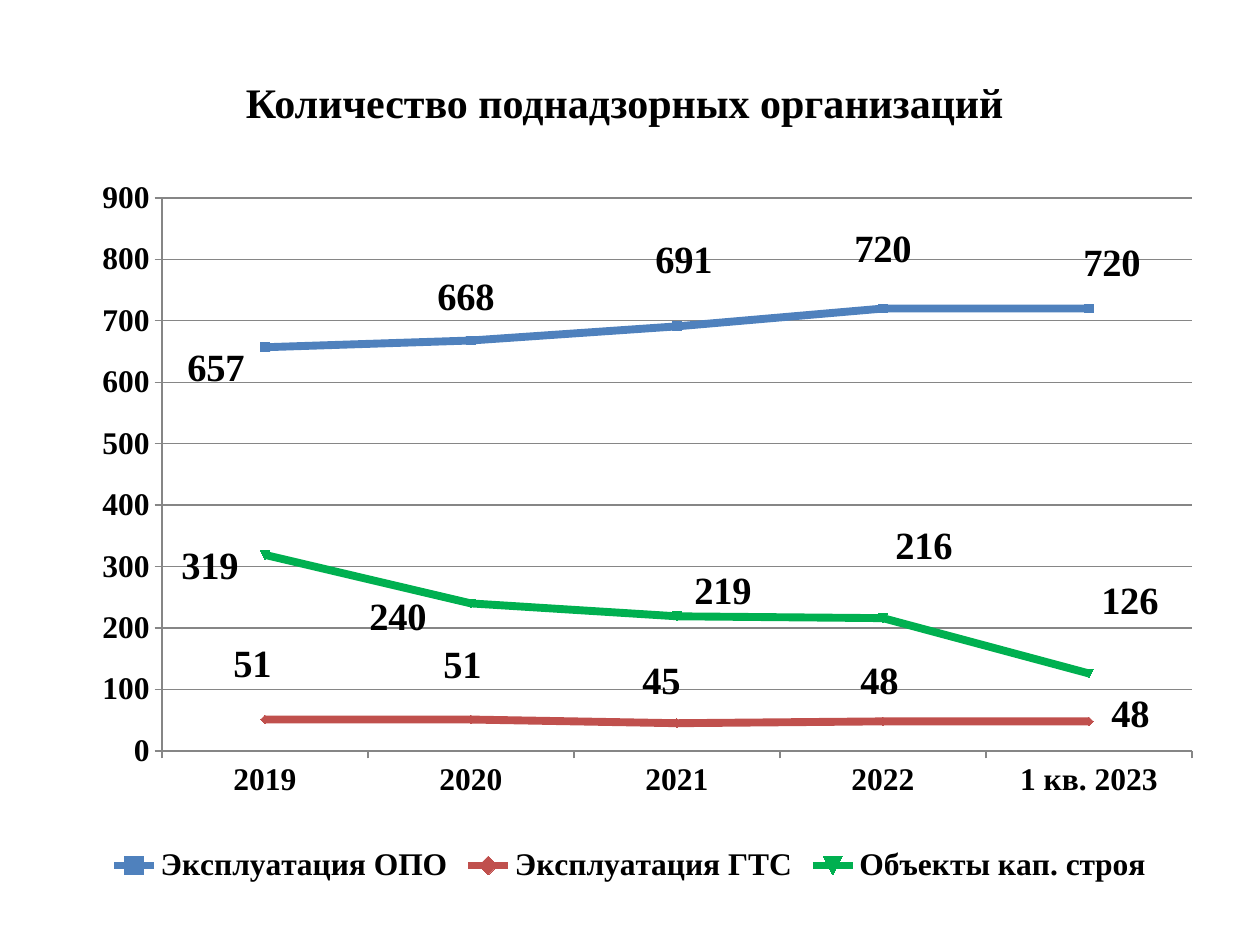
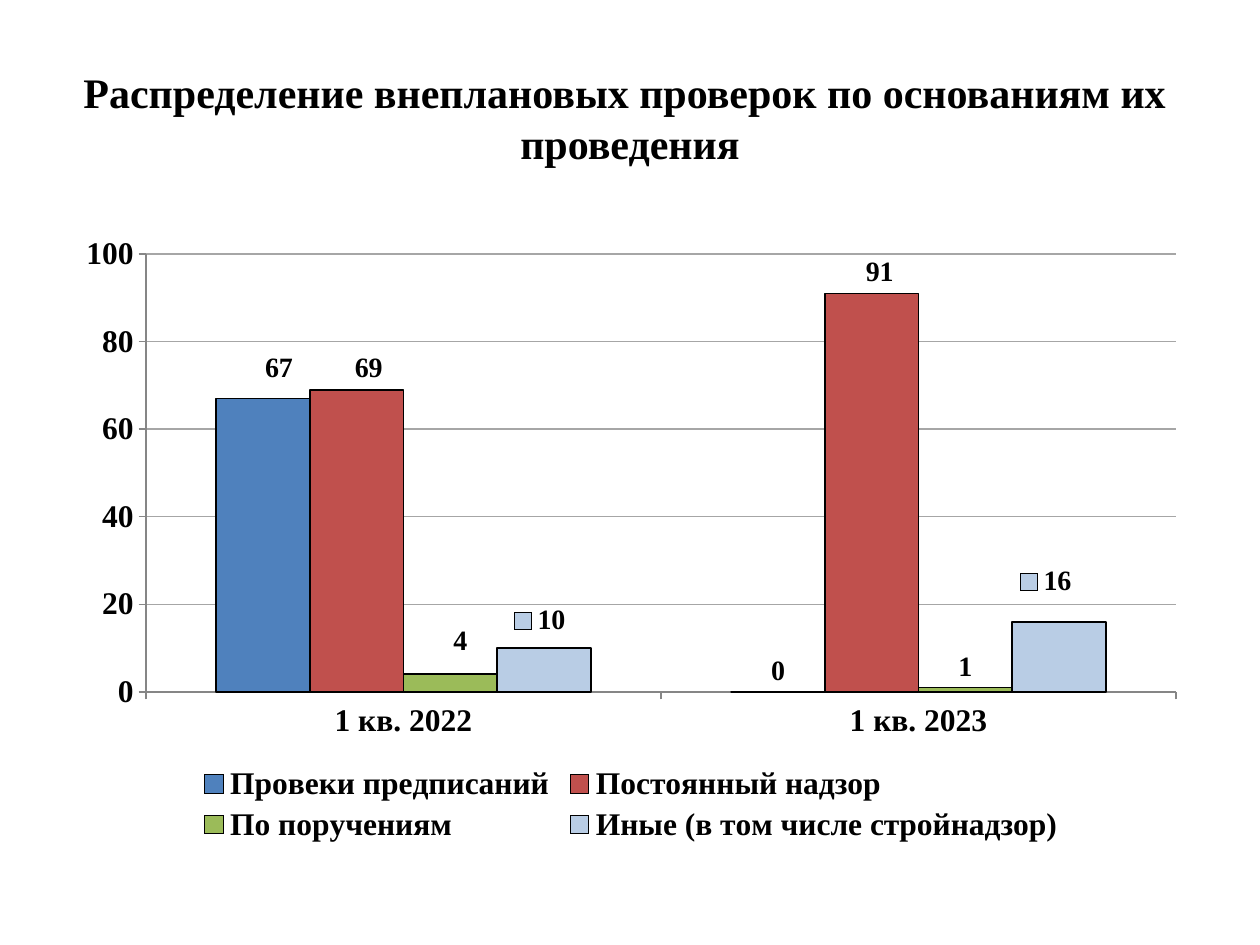
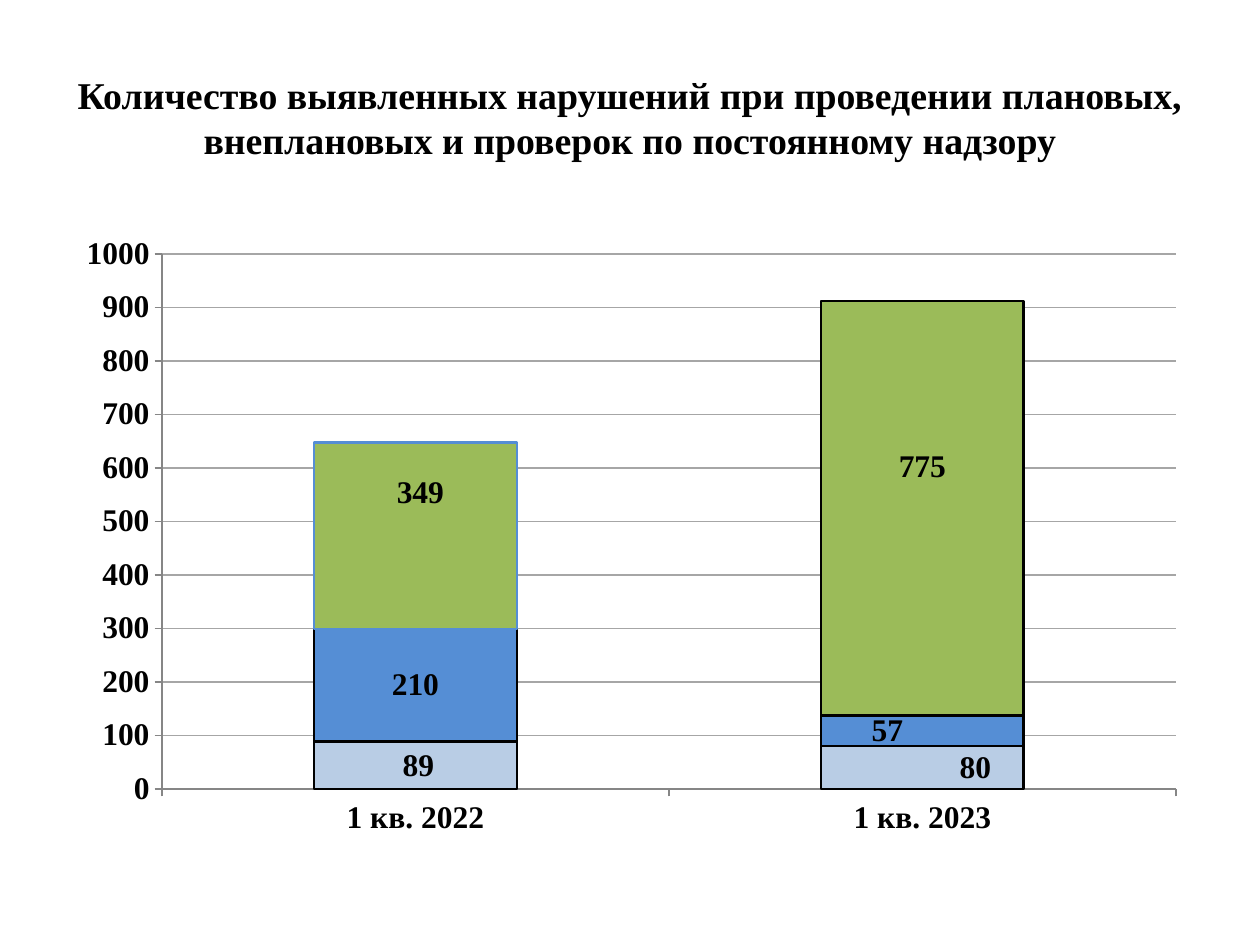
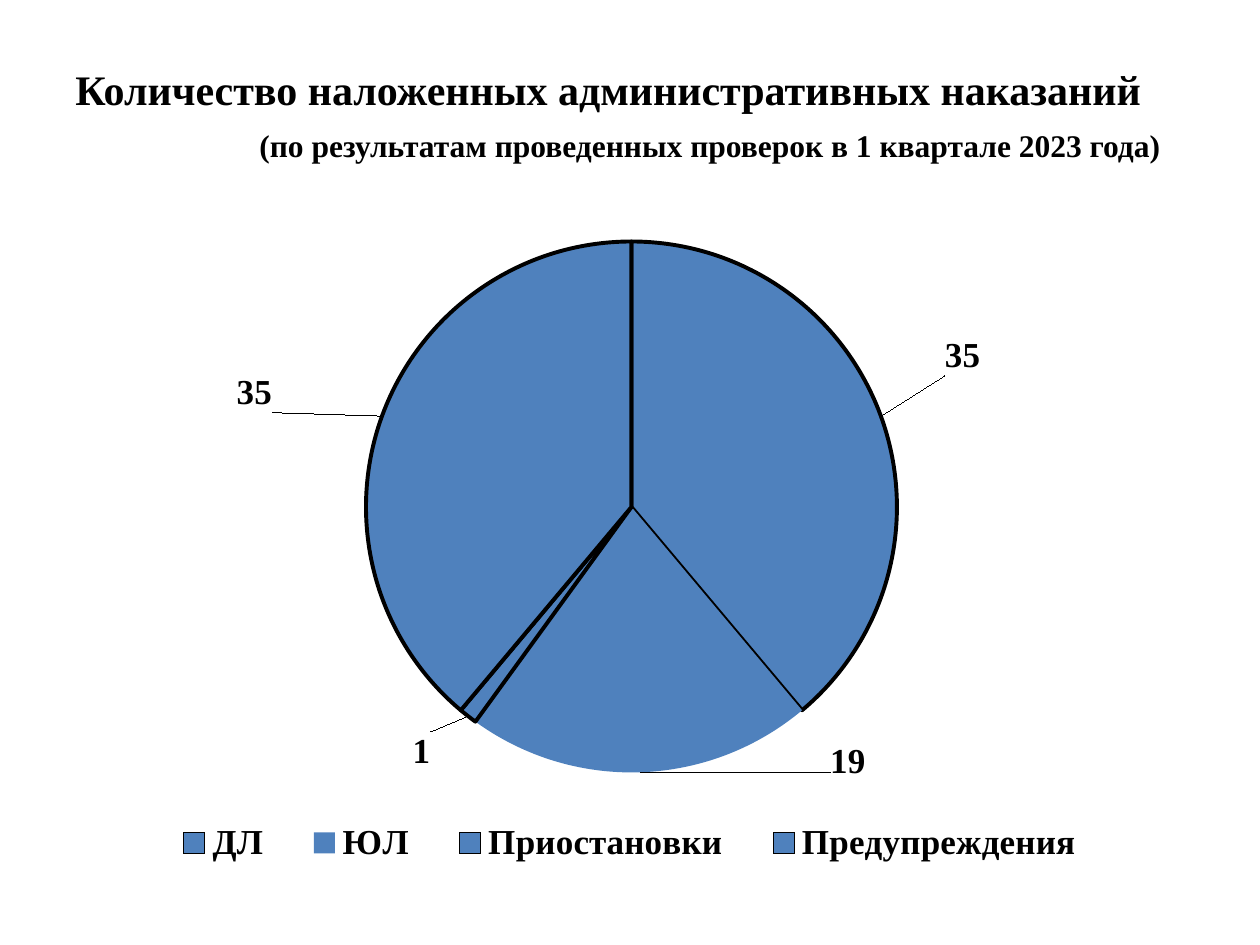
from dataclasses import dataclass, field
from typing import Any, Optional

from pptx import Presentation
from pptx.chart.data import CategoryChartData
from pptx.dml.color import RGBColor
from pptx.enum.chart import XL_CHART_TYPE, XL_LABEL_POSITION, XL_LEGEND_POSITION, XL_TICK_MARK
from pptx.enum.text import MSO_ANCHOR, PP_ALIGN
from pptx.oxml import parse_xml
from pptx.oxml.ns import nsdecls, qn
from pptx.util import Pt

LINE = XL_CHART_TYPE.LINE_MARKERS
CLUSTERED = XL_CHART_TYPE.COLUMN_CLUSTERED
STACKED = XL_CHART_TYPE.COLUMN_STACKED
PIE = XL_CHART_TYPE.PIE
LABEL_RIGHT = XL_LABEL_POSITION.RIGHT
LABEL_CENTER = XL_LABEL_POSITION.CENTER
LABEL_OUTSIDE = XL_LABEL_POSITION.OUTSIDE_END
LEGEND_BOTTOM = XL_LEGEND_POSITION.BOTTOM
TICK_OUTSIDE = XL_TICK_MARK.OUTSIDE
TICK_NONE = XL_TICK_MARK.NONE
MIDDLE = MSO_ANCHOR.MIDDLE
CENTER = PP_ALIGN.CENTER
LEFT = PP_ALIGN.LEFT

PX_PER_INCH = 126
EMU_PER_INCH = 914400
FONT = "Times New Roman"
COLORS = {
    "background": "FFFFFF",
    "text": "000000",
    "outline": "000000",
    "axis": "868686",
    "grid": "A6A6A6",
    "blue": "4F81BD",
    "red": "C0504D",
    "bright_green": "00B050",
    "green": "9BBB59",
    "pale_blue": "B9CDE5",
    "sky_blue": "558ED5",
}
QUARTERS = ("1 кв. 2022", "1 кв. 2023")


@dataclass(frozen=True)
class Box:
    left: int
    top: int
    width: int
    height: int


@dataclass(frozen=True)
class TitleLine:
    text: str
    size: float = 24
    align: Any = CENTER
    indent: int = 0
    space_before: int = 0


@dataclass(frozen=True)
class Series:
    name: str
    values: tuple[int, ...]
    color: str
    label_shifts: tuple[tuple[int, int], ...]
    legend_key: bool = False
    point_outlines: dict[int, Optional[str]] = field(default_factory=dict)


@dataclass(frozen=True)
class ChartSlide:
    title: tuple[TitleLine, ...]
    title_box: Box
    kind: Any
    chart_box: Box
    plot_box: Box
    categories: tuple[str, ...]
    series: tuple[Series, ...]
    label_position: Any
    label_size: int
    line_width: float
    maximum: int = 0
    step: int = 0
    grid: str = "grid"
    has_legend: bool = True
    legend_size: int = 18
    legend_box: Optional[Box] = None
    title_bottom: int = 6


SLIDES = (
    ChartSlide(
        title=(TitleLine("Количество поднадзорных организаций "),),
        title_box=Box(63, 38, 1134, 127),
        kind=LINE,
        chart_box=Box(63, 175, 1134, 714),
        plot_box=Box(162, 198, 1030, 553),
        categories=("2019", "2020", "2021", "2022", "1 кв. 2023"),
        series=(
            Series("Эксплуатация ОПО", (657, 668, 691, 720, 720), "blue",
                   ((-87, 21), (-43, -43), (-31, -66), (-38, -59), (-15, -45))),
            Series("Эксплуатация ГТС", (51, 51, 45, 48, 48), "red",
                   ((-41, -55), (-37, -54), (-44, -42), (-32, -40), (13, -7))),
            Series("Объекты кап. строя", (319, 240, 219, 216, 126), "bright_green",
                   ((-93, 11), (-111, 14), (8, -25), (3, -72), (3, -72))),
        ),
        label_position=LABEL_RIGHT,
        label_size=22,
        line_width=4.5,
        maximum=900,
        step=100,
        grid="axis",
    ),
    ChartSlide(
        title=(TitleLine("Распределение внеплановых проверок по основаниям их \vпроведения"),),
        title_box=Box(63, 38, 1134, 158),
        kind=CLUSTERED,
        chart_box=Box(64, 224, 1134, 624),
        plot_box=Box(146, 254, 1030, 438),
        categories=QUARTERS,
        series=(
            Series("Провеки предписаний", (67, 0), "blue", ((16, -10), (0, 0))),
            Series("Постоянный надзор", (69, 91), "red", ((12, -1), (8, 0))),
            Series("По поручениям", (4, 1), "green", ((10, -12), (0, 0))),
            Series("Иные (в том числе стройнадзор)", (10, 16), "pale_blue",
                   ((-4, -7), (-13, -20)), legend_key=True),
        ),
        label_position=LABEL_OUTSIDE,
        label_size=16,
        line_width=1,
        maximum=100,
        step=20,
    ),
    ChartSlide(
        title=(TitleLine("Количество выявленных нарушений при проведении плановых, "
                         "внеплановых и проверок по постоянному надзору", 21.6),),
        title_box=Box(63, 38, 1134, 158),
        kind=STACKED,
        chart_box=Box(64, 224, 1134, 624),
        plot_box=Box(162, 254, 1014, 535),
        categories=QUARTERS,
        series=(
            Series("Series 1", (89, 80), "pale_blue", ((3, 1), (53, 0))),
            Series("Series 2", (210, 57), "sky_blue", ((0, 0), (-35, 0))),
            Series("Series 3", (349, 775), "green", ((5, -43), (0, -41)),
                   point_outlines={0: "sky_blue"}),
        ),
        label_position=LABEL_CENTER,
        label_size=18,
        line_width=1.5,
        maximum=1000,
        step=100,
        has_legend=False,
    ),
    ChartSlide(
        title=(
            TitleLine("Количество наложенных административных наказаний", align=LEFT),
            TitleLine("(по результатам проведенных проверок в 1 квартале 2023 года)",
                      18, LEFT, indent=184, space_before=7),
        ),
        title_box=Box(63, 38, 1134, 186),
        title_bottom=40,
        kind=PIE,
        chart_box=Box(64, 224, 1134, 674),
        plot_box=Box(366, 241, 531, 532),
        categories=("ДЛ", "ЮЛ", "Приостановки", "Предупреждения"),
        series=(
            Series("Series 1", (35, 19, 1, 35), "blue",
                   ((57, -38), (207, -38), (-33, 10), (-103, -1)),
                   point_outlines={0: "outline", 1: None, 2: "outline", 3: "outline"}),
        ),
        label_position=LABEL_OUTSIDE,
        label_size=20,
        line_width=2.25,
        legend_size=20,
        legend_box=Box(145, 820, 970, 46),
    ),
)


def px(length: int) -> int:
    return round(length * EMU_PER_INCH / PX_PER_INCH)


def frame(box: Box) -> tuple[int, int, int, int]:
    return px(box.left), px(box.top), px(box.width), px(box.height)


def rgb(name: str) -> RGBColor:
    return RGBColor.from_string(COLORS[name])


def apply_format(target: Any, values: dict[str, Any]) -> None:
    for name, value in values.items():
        setattr(target, name, value)


def style_font(font: Any, size: float) -> None:
    apply_format(font, {"name": FONT, "size": Pt(size), "bold": True})
    font.color.rgb = rgb("text")


def style_line(line: Any, color: Optional[str], width: float) -> None:
    if color is None:
        line.fill.background()
    else:
        line.color.rgb = rgb(color)
        line.width = Pt(width)


def style_fill(fill: Any, color: str) -> None:
    fill.solid()
    fill.fore_color.rgb = rgb(color)


def set_layout(parent: Any, index: int, values: dict[str, Any]) -> None:
    for layout in parent.findall(qn("c:layout")):
        parent.remove(layout)
    entries = "".join(f'<c:{name} val="{value}"/>' for name, value in values.items())
    parent.insert(index, parse_xml(
        f'<c:layout {nsdecls("c")}><c:manualLayout>{entries}</c:manualLayout></c:layout>'))


def edge_layout(box: Box, chart_box: Box) -> dict[str, Any]:
    return {
        "xMode": "edge",
        "yMode": "edge",
        "x": (box.left - chart_box.left) / chart_box.width,
        "y": (box.top - chart_box.top) / chart_box.height,
        "w": box.width / chart_box.width,
        "h": box.height / chart_box.height,
    }


def add_title(slide: Any, content: ChartSlide) -> None:
    text_frame = slide.shapes.add_textbox(*frame(content.title_box)).text_frame
    apply_format(text_frame, {
        "word_wrap": True,
        "vertical_anchor": MIDDLE,
        "margin_bottom": px(content.title_bottom),
    })
    for index, line in enumerate(content.title):
        paragraph = text_frame.add_paragraph() if index else text_frame.paragraphs[0]
        paragraph.text = line.text
        apply_format(paragraph, {"alignment": line.align, "space_before": Pt(line.space_before)})
        if line.indent:
            paragraph._p.get_or_add_pPr().set("marL", str(px(line.indent)))
        for run in paragraph.runs:
            style_font(run.font, line.size)


def style_axes(chart: Any, content: ChartSlide) -> None:
    for axis in (chart.category_axis, chart.value_axis):
        apply_format(axis, {"major_tick_mark": TICK_OUTSIDE, "minor_tick_mark": TICK_NONE})
        style_font(axis.tick_labels.font, 18)
        style_line(axis.format.line, "axis", 0.75)
    apply_format(chart.value_axis, {
        "minimum_scale": 0,
        "maximum_scale": content.maximum,
        "major_unit": content.step,
        "has_major_gridlines": True,
    })
    style_line(chart.value_axis.major_gridlines.format.line, content.grid, 0.75)


def style_series(series: Any, data: Series, content: ChartSlide) -> None:
    if content.kind == LINE:
        series.smooth = False
        series.marker.size = 5
        style_line(series.format.line, data.color, content.line_width)
        return
    style_fill(series.format.fill, data.color)
    style_line(series.format.line, "outline", content.line_width)
    if content.kind != PIE:
        series.invert_if_negative = False
    for index, outline in data.point_outlines.items():
        point_format = series.points[index].format
        style_fill(point_format.fill, data.color)
        style_line(point_format.line, outline, content.line_width)


def add_labels(series: Any, data: Series, content: ChartSlide) -> None:
    labels = series.data_labels
    apply_format(labels, {"show_value": True, "position": content.label_position})
    style_font(labels.font, content.label_size)
    for index in range(len(data.values)):
        label = series.points[index].data_label
        style_font(label.font, content.label_size)
        label.position = content.label_position
    for element, (across, down) in zip(labels._element.findall(qn("c:dLbl")), data.label_shifts):
        set_layout(element, 1, {
            "x": across / content.chart_box.width,
            "y": down / content.chart_box.height,
        })
        element.find(qn("c:showLegendKey")).set("val", str(int(data.legend_key)))
    for leader in labels._element.findall(qn("c:showLeaderLines")):
        leader.set("val", str(int(content.kind == PIE)))


def add_legend(chart: Any, content: ChartSlide) -> None:
    chart.has_legend = content.has_legend
    if not content.has_legend:
        return
    apply_format(chart.legend, {"position": LEGEND_BOTTOM, "include_in_layout": False})
    style_font(chart.legend.font, content.legend_size)
    if content.legend_box:
        set_layout(chart.legend._element, 1, edge_layout(content.legend_box, content.chart_box))


def add_chart(slide: Any, content: ChartSlide) -> None:
    chart_data = CategoryChartData()
    chart_data.categories = content.categories
    for data in content.series:
        chart_data.add_series(data.name, data.values)
    chart = slide.shapes.add_chart(content.kind, *frame(content.chart_box), chart_data).chart
    chart.has_title = False
    style_font(chart.font, 18)
    plot = chart.plots[0]
    plot.vary_by_categories = content.kind == PIE
    if content.kind in (CLUSTERED, STACKED):
        apply_format(plot, {"gap_width": 150, "overlap": 100 if content.kind == STACKED else 0})
    if content.kind != PIE:
        style_axes(chart, content)
    for series, data in zip(plot.series, content.series):
        style_series(series, data, content)
        add_labels(series, data, content)
    add_legend(chart, content)
    plot_area = chart._chartSpace.find(qn("c:chart")).find(qn("c:plotArea"))
    set_layout(plot_area, 0, {"layoutTarget": "inner",
                              **edge_layout(content.plot_box, content.chart_box)})


def main() -> None:
    presentation = Presentation()
    apply_format(presentation, {"slide_width": px(1260), "slide_height": px(945)})
    for content in SLIDES:
        slide = presentation.slides.add_slide(presentation.slide_layouts[6])
        style_fill(slide.background.fill, "background")
        add_title(slide, content)
        add_chart(slide, content)
    presentation.save("out.pptx")


if __name__ == "__main__":
    main()
